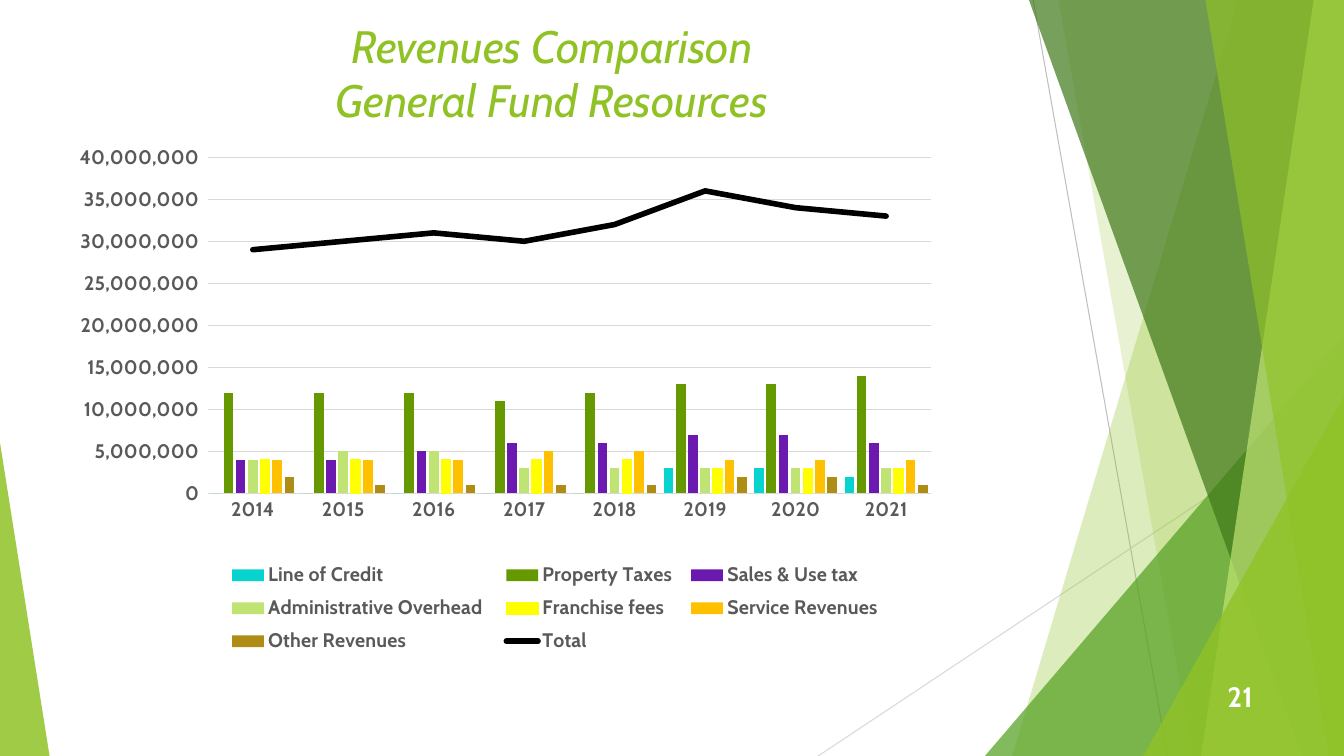
from dataclasses import dataclass

from lxml import etree
from pptx import Presentation
from pptx.chart.data import CategoryChartData
from pptx.dml.color import RGBColor
from pptx.enum.chart import XL_CHART_TYPE, XL_LEGEND_POSITION, XL_TICK_MARK
from pptx.enum.shapes import MSO_CONNECTOR, MSO_SHAPE
from pptx.enum.text import MSO_ANCHOR, PP_ALIGN
from pptx.oxml import parse_xml
from pptx.oxml.ns import nsdecls, qn
from pptx.util import Emu, Pt

COLUMNS, ROWS = 160, 90
CELL = 76200
BARS = XL_CHART_TYPE.COLUMN_CLUSTERED
BOTTOM = XL_LEGEND_POSITION.BOTTOM
NO_TICK = XL_TICK_MARK.NONE
STRAIGHT = MSO_CONNECTOR.STRAIGHT
TRIANGLE = MSO_SHAPE.ISOSCELES_TRIANGLE
MIDDLE = MSO_ANCHOR.MIDDLE
CENTER, RIGHT = PP_ALIGN.CENTER, PP_ALIGN.RIGHT


@dataclass(frozen=True)
class Theme:
    font: str = "Cabin"
    green: str = "90C226"
    leaf: str = "54A021"
    forest: str = "3F7819"
    lime: str = "C0E474"
    yellow: str = "FFFF00"
    white: str = "FFFFFF"
    black: str = "000000"
    label: str = "595959"
    rule: str = "D9D9D9"
    edge: str = "BFBFBF"
    title_size: float = 32.4
    number_size: float = 20
    chart_size: float = 14
    thin: float = 0.75
    thick: float = 4


THEME = Theme()
YEARS = [str(year) for year in range(2014, 2022)]
MILLION = 1_000_000
REVENUES = [
    ("Line of Credit", "08D4CF", [0, 0, 0, 0, 0, 3, 3, 2]),
    ("Property Taxes", "669900", [12, 12, 12, 11, 12, 13, 13, 14]),
    ("Sales & Use tax", "6B19AF", [4, 4, 5, 6, 6, 7, 7, 6]),
    ("Administrative Overhead ", THEME.lime, [4, 5, 5, 3, 3, 3, 3, 3]),
    ("Franchise fees", THEME.yellow, [4, 4, 4, 4, 4, 3, 3, 3]),
    ("Service Revenues", "FFC000", [4, 4, 4, 5, 5, 4, 4, 4]),
    ("Other Revenues", "AF8C14", [2, 1, 1, 1, 1, 2, 2, 1]),
    ("Total", THEME.black, [29, 30, 31, 30, 32, 36, 34, 33]),
]


def grid(*cells):
    return [Emu(round(cell * CELL)) for cell in cells]


def set_line(line, color, width):
    line.color.rgb = RGBColor.from_string(color)
    line.width = Pt(width)


def set_font(font, color, size, bold=False, italic=False):
    font.name = THEME.font
    font.size = Pt(size)
    font.bold = bold
    font.italic = italic
    font.color.rgb = RGBColor.from_string(color)


def paint(shape, color, opacity):
    shape.shadow.inherit = False
    shape.line.fill.background()
    shape.fill.solid()
    shape.fill.fore_color.rgb = RGBColor.from_string(color)
    tint = shape.element.spPr.find(qn("a:solidFill"))[0]
    etree.SubElement(tint, qn("a:alpha")).set("val", str(opacity * 1000))


def add_ray(page, start, end, color):
    ray = page.shapes.add_connector(STRAIGHT, *grid(*start, *end))
    set_line(ray.line, color, THEME.thin)
    etree.SubElement(ray.element.spPr, qn("a:effectLst"))


def add_band(page, top_left, bottom_left, color, opacity):
    corners = [(top_left, 0), (COLUMNS, 0), (COLUMNS, ROWS), (bottom_left, ROWS)]
    points = [tuple(grid(*corner)) for corner in corners]
    builder = page.shapes.build_freeform(*points[0])
    builder.add_line_segments(points[1:], close=True)
    paint(builder.convert_to_shape(), color, opacity)


def add_triangle(page, left, top, width, apex, color, opacity):
    triangle = page.shapes.add_shape(TRIANGLE, *grid(left, top, width, ROWS - top))
    triangle.adjustments[0] = apex
    paint(triangle, color, opacity)


def add_text(page, text, area, align, size, color, **style):
    box = page.shapes.add_textbox(*grid(*area))
    box.text_frame.word_wrap = True
    box.text_frame.vertical_anchor = MIDDLE
    para = box.text_frame.paragraphs[0]
    para.text = text
    para.alignment = align
    set_font(para.font, color, size, **style)


def add_facets(page):
    add_ray(page, (123, 0), (139, ROWS), THEME.edge)
    add_ray(page, (COLUMNS, 48.4), (97.4, ROWS), THEME.rule)
    add_band(page, 147.4, 120.5, THEME.green, 30)
    add_band(page, 126, 142, THEME.green, 20)
    add_triangle(page, 117.25, 40, 42.75, 1, THEME.leaf, 72)
    add_band(page, 122.5, 155, THEME.forest, 70)
    add_band(page, 156.4, 143, THEME.lime, 70)
    add_band(page, 143.5, 158.2, THEME.green, 65)
    add_triangle(page, 136.1, 47.2, 23.9, 1, THEME.green, 80)
    add_triangle(page, 0, 52.7, 5.9, 0, THEME.green, 85)


def set_layout(parent, position, percents, target=""):
    for layout in parent.findall(qn("c:layout")):
        parent.remove(layout)
    left, top, width, height = (percent / 100 for percent in percents)
    parent.insert(position, parse_xml(
        f'<c:layout {nsdecls("c")}><c:manualLayout>{target}'
        '<c:xMode val="edge"/><c:yMode val="edge"/>'
        f'<c:x val="{left}"/><c:y val="{top}"/>'
        f'<c:w val="{width}"/><c:h val="{height}"/>'
        "</c:manualLayout></c:layout>"
    ))


def move_last_series_to_line(plot_area):
    bars = plot_area.find(qn("c:barChart"))
    total = bars.findall(qn("c:ser"))[-1]
    invert = total.find(qn("c:invertIfNegative"))
    if invert is not None:
        total.remove(invert)
    outline = total.find(qn("c:spPr"))
    outline.find(qn("a:ln")).set("cap", "rnd")
    outline.addnext(parse_xml(
        f'<c:marker {nsdecls("c")}><c:symbol val="none"/></c:marker>'))
    etree.SubElement(total, qn("c:smooth")).set("val", "0")
    line = parse_xml(
        f'<c:lineChart {nsdecls("c")}><c:grouping val="standard"/>'
        '<c:varyColors val="0"/><c:marker val="1"/></c:lineChart>')
    line.insert(2, total)
    for axis in bars.findall(qn("c:axId")):
        etree.SubElement(line, qn("c:axId")).set("val", axis.get("val"))
    bars.addnext(line)


def style_axes(chart):
    for axis in (chart.category_axis, chart.value_axis):
        axis.major_tick_mark = axis.minor_tick_mark = NO_TICK
        set_font(axis.tick_labels.font, THEME.label, THEME.chart_size, bold=True)
    set_line(chart.category_axis.format.line, THEME.rule, THEME.thin)
    values = chart.value_axis
    values.minimum_scale, values.maximum_scale = 0, 40 * MILLION
    values.major_unit = 5 * MILLION
    values.format.line.fill.background()
    set_line(values.major_gridlines.format.line, THEME.rule, THEME.thin)
    values.tick_labels.number_format = r"#,##0_);\(#,##0\)"
    values.tick_labels.number_format_is_linked = False


def style_series(plot):
    plot.gap_width, plot.overlap = 78, -27
    plot.vary_by_categories = False
    *bars, total = plot.series
    for series, (_, color, _) in zip(bars, REVENUES):
        series.format.fill.solid()
        series.format.fill.fore_color.rgb = RGBColor.from_string(color)
        if color == THEME.yellow:
            set_line(series.format.line, color, THEME.thin)
    set_line(total.format.line, THEME.black, THEME.thick)


def add_revenue_chart(page, area):
    data = CategoryChartData(number_format="#,##0")
    data.categories = YEARS
    for name, _, millions in REVENUES:
        data.add_series(name, [value * MILLION for value in millions])
    chart = page.shapes.add_chart(BARS, *grid(*area), data).chart
    set_font(chart.font, THEME.black, 10)
    chart.has_title = False
    style_axes(chart)
    style_series(chart.plots[0])

    chart.has_legend = True
    chart.legend.position = BOTTOM
    chart.legend.include_in_layout = False
    set_font(chart.legend.font, THEME.label, THEME.chart_size, bold=True)

    plot_area = chart.element.find(".//" + qn("c:plotArea"))
    move_last_series_to_line(plot_area)
    set_layout(plot_area, 0, (15.1, 3.3, 83.1, 59.2), '<c:layoutTarget val="inner"/>')
    legend = chart.element.find(".//" + qn("c:legend"))
    set_layout(legend, 1, (16.5, 73.2, 77, 19))


def main():
    deck = Presentation()
    deck.slide_width, deck.slide_height = grid(COLUMNS, ROWS)
    page = deck.slides.add_slide(deck.slide_layouts[6])
    add_facets(page)
    add_text(page, "Revenues Comparison\vGeneral Fund Resources", (9.7, 2.15, 112, 13),
             CENTER, THEME.title_size, THEME.green, italic=True)
    add_revenue_chart(page, (9.05, 16.5, 103.7, 67.6))
    add_text(page, "21", (141.3, 80.5, 9, 4.8),
             RIGHT, THEME.number_size, THEME.white, bold=True)
    deck.save("out.pptx")


if __name__ == "__main__":
    main()
